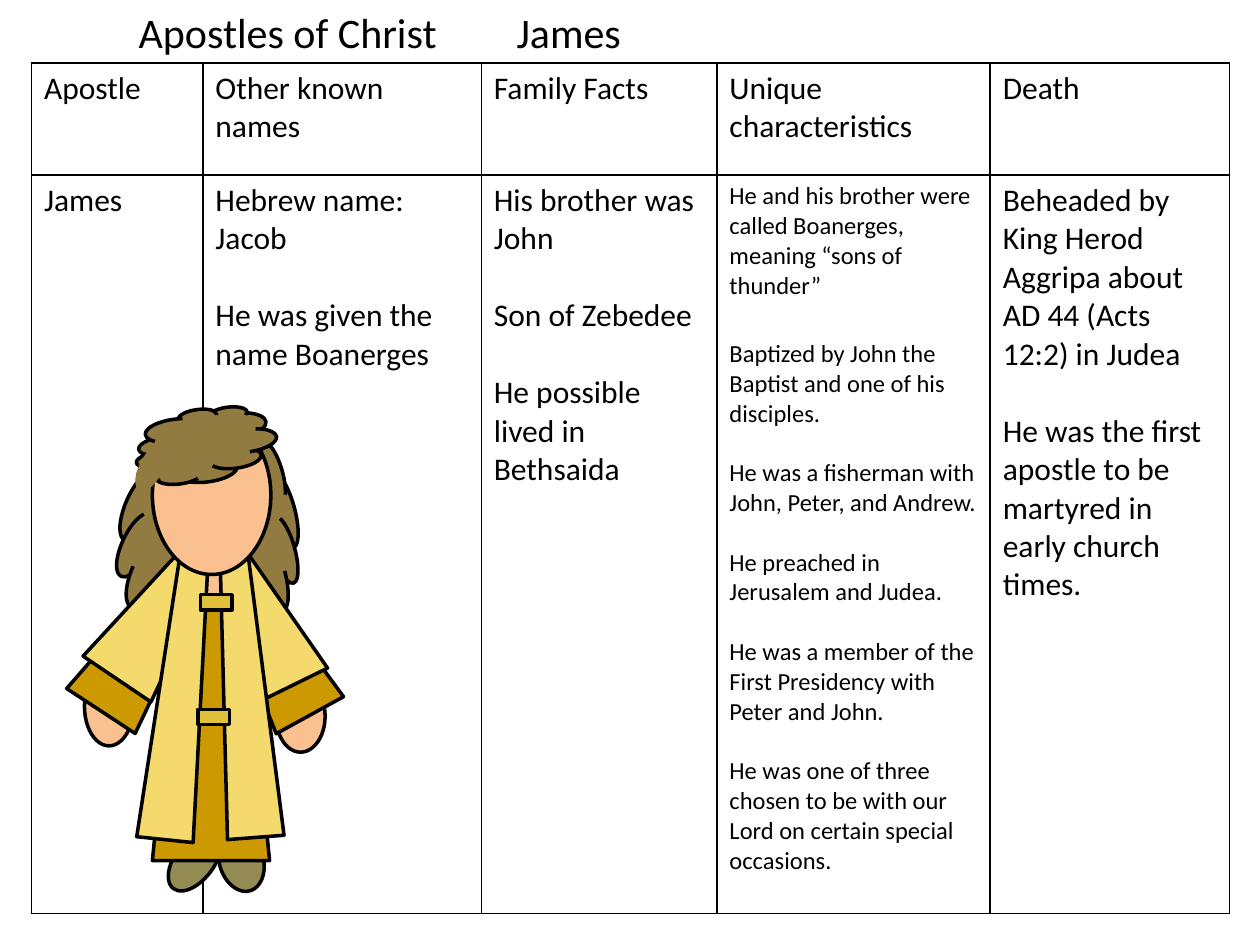
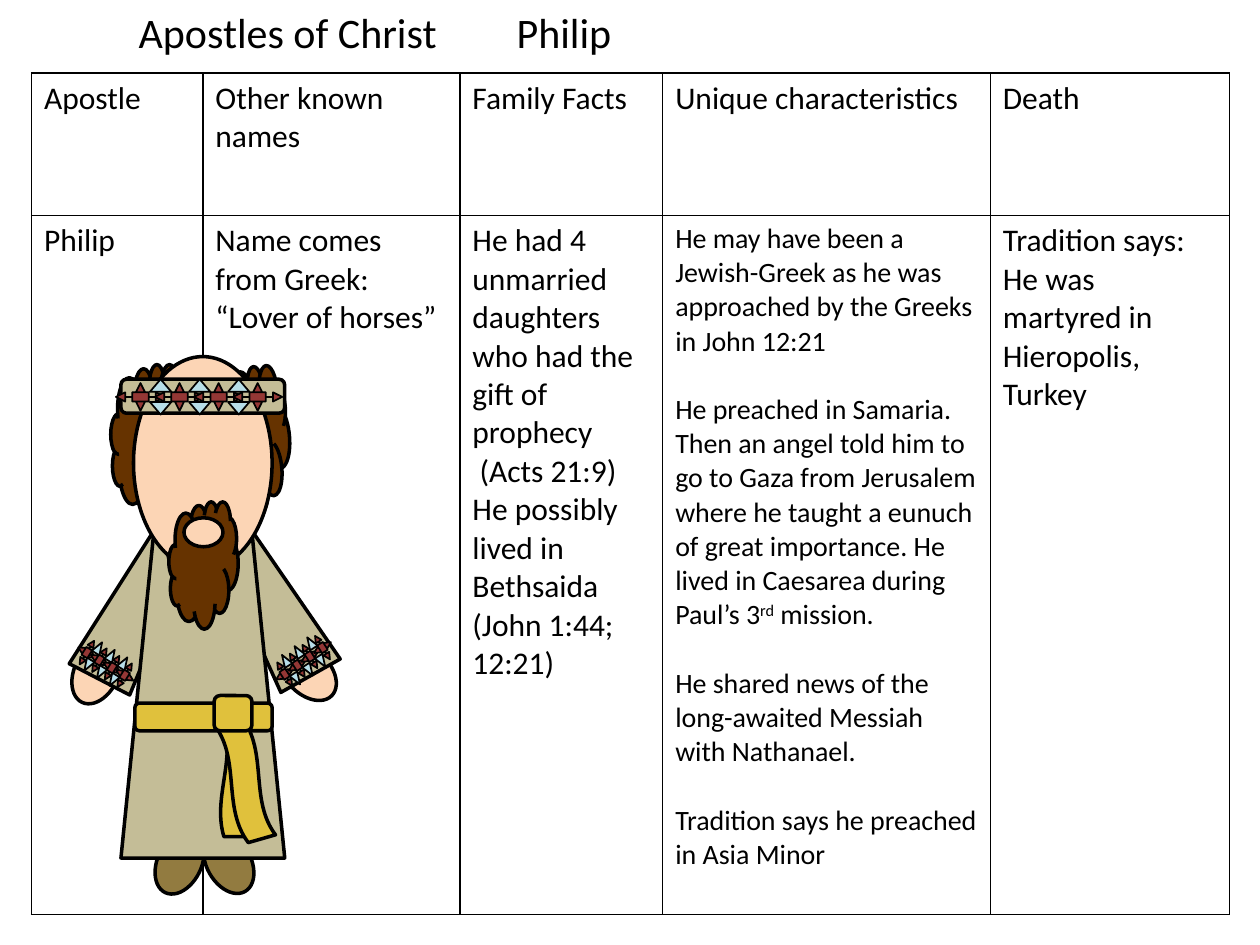
from lxml import etree
from pptx import Presentation
from pptx import util as u
from pptx.dml.color import RGBColor
from pptx.enum import shapes, text
from pptx.oxml.ns import qn

BLACK = RGBColor(0x00, 0x00, 0x00)
OLIVE = RGBColor(0x92, 0x7B, 0x40)
SHOE = RGBColor(0x94, 0x8A, 0x54)
TAN = RGBColor(0xFA, 0xC0, 0x90)
PEACH = RGBColor(0xFC, 0xD5, 0xB5)
OCHRE = RGBColor(0xCC, 0x99, 0x00)
CREAM = RGBColor(0xF4, 0xDA, 0x6C)
GOLD = RGBColor(0xE0, 0xC1, 0x3C)
BROWN = RGBColor(0x66, 0x33, 0x00)
LINEN = RGBColor(0xC4, 0xBD, 0x97)
RED = RGBColor(0x95, 0x37, 0x35)
BLUE = RGBColor(0xB7, 0xDE, 0xE8)

FONT = "Calibri"
TITLE_AREA = (1, 0, 7.25, 0.5)
TABLE_LEFT, TABLE_WIDTH = 0.25, 9.5
HEADINGS = ["Apostle", "Other known names", "Family Facts",
            "Unique characteristics", "Death"]

KIND = shapes.MSO_SHAPE
CLOUD, OVAL, BOX, ROUND = KIND.CLOUD, KIND.OVAL, KIND.RECTANGLE, KIND.ROUNDED_RECTANGLE
TRAPEZOID, WAVE = KIND.TRAPEZOID, KIND.WAVE
FLARE = KIND.FLOWCHART_MANUAL_OPERATION
BEAD, TRIANGLE = KIND.QUAD_ARROW_CALLOUT, KIND.ISOSCELES_TRIANGLE
BEAD_ADJUSTMENTS = (0, 0.167, 0.333, 0.481)

# Figure parts, back to front: kind, (left, top, width, height), rotation, fill
JAMES_FIGURE = [
    (CLOUD, (0.97, 3.39, 0.81, 1.5), 25.3, OLIVE, {"flip": True}),
    (CLOUD, (1.72, 3.37, 0.63, 1.5), 344.3, OLIVE),
    (OVAL, (2.19, 5.4, 0.39, 0.57), 0, TAN),
    (OVAL, (0.67, 5.29, 0.39, 0.63), 0, TAN),
    (OVAL, (1.39, 6.55, 0.31, 0.56), 37.1, SHOE),
    (OVAL, (1.74, 6.58, 0.35, 0.5), 343.7, SHOE),
    (TRAPEZOID, (0.8, 4.56, 0.65, 1.18), 33.3, OCHRE),
    (TRAPEZOID, (0.9, 4.42, 0.65, 1.06), 34, CREAM),
    (TRAPEZOID, (1.87, 4.57, 0.61, 1.18), 331.2, OCHRE),
    (TRAPEZOID, (1.75, 4.44, 0.65, 1.06), 333.9, CREAM),
    (TRAPEZOID, (1.21, 4.47, 0.93, 2.36), 0, OCHRE),
    (OVAL, (1.47, 4.28, 0.39, 0.5), 0, TAN),
    (TRAPEZOID, (1.72, 4.43, 0.45, 2.22), 355.6, CREAM),
    (TRAPEZOID, (1.2, 4.41, 0.45, 2.26), 5.9, CREAM),
    (OVAL, (1.21, 3.3, 0.94, 1.26), 0, TAN),
    (BOX, (1.59, 4.72, 0.25, 0.12), 0, GOLD),
    (BOX, (1.57, 5.63, 0.25, 0.12), 0, GOLD),
    (CLOUD, (1.34, 2.97, 0.58, 1.13), 262.4, OLIVE, {"flip": True}),
    (OVAL, (1.01, 3.63, 0.38, 0.16), 297.2, OLIVE, {"line": OLIVE}),
]
PHILIP_FIGURE = [
    (OVAL, (1.55, 6.67, 0.53, 0.35), 60.8, OLIVE),
    (OVAL, (1.16, 6.67, 0.53, 0.35), 115.4, OLIVE),
    (CLOUD, (1.69, 2.91, 0.61, 1.18), 355.1, BROWN),
    (CLOUD, (0.88, 2.89, 0.6, 1.18), 0, BROWN),
    (OVAL, (2.18, 5.16, 0.53, 0.35), 45.1, PEACH),
    (OVAL, (0.5, 5.16, 0.53, 0.35), 115.4, PEACH),
    (FLARE, (1.9, 4.24, 0.54, 1.2), 150.6, LINEN),
    (FLARE, (0.8, 4.24, 0.54, 1.22), 207.4, LINEN),
    (FLARE, (0.96, 4.23, 1.3, 2.58), 180, LINEN),
    (ROUND, (1.07, 5.58, 1.09, 0.22), 0, GOLD),
    (OVAL, (1.32, 3.73, 0.55, 1.03), 0, PEACH),
    (OVAL, (1.06, 2.83, 1.1, 1.69), 0, PEACH),
    (CLOUD, (1.34, 3.98, 0.55, 1.01), 0, BROWN),
    (ROUND, (0.96, 3.01, 1.3, 0.27), 0, LINEN),
    (OVAL, (1.46, 4.11, 0.31, 0.23), 0, PEACH),
    (WAVE, (1.41, 6.08, 0.9, 0.22), 270, GOLD),
    (WAVE, (1.46, 6.04, 0.97, 0.3), 254, GOLD),
    (ROUND, (1.7, 5.52, 0.3, 0.28), 0, GOLD),
]
HEADBAND = {"step": (0.31, 0), "angle": 0,
            "bead": (0.92, 3.04), "bead_size": (0.39, 0.22),
            "upper": (1.19, 3.01), "lower": (1.19, 3.19), "triangle_size": (0.17, 0.1)}
CUFF_SIZES = {"bead_size": (0.16, 0.22), "triangle_size": (0.07, 0.1)}
LEFT_CUFF = {"step": (0.1, 0.06), "angle": 31.5, "bead": (0.61, 5.07),
             "upper": (0.75, 5.09), "lower": (0.66, 5.23), **CUFF_SIZES}
RIGHT_CUFF = {"step": (0.1, -0.07), "angle": 327.5, "bead": (2.18, 5.24),
              "upper": (2.23, 5.19), "lower": (2.32, 5.34), **CUFF_SIZES}

# Each cell of facts: size, space between paragraphs, paragraphs (^ marks superscript).
# A paragraph given as (size, text) differs from the size of its cell.
APOSTLES = [
    {
        "name": "James", "top": 0.5,
        "columns": (1.36, 2.21, 1.87, 2.17, 1.9), "rows": (0.89, 5.86),
        "facts": [
            (18, 0, ["James"]),
            (18, 22, ["Hebrew name: Jacob", "He was given the name Boanerges"]),
            (18, 22, ["His brother was John", "Son of Zebedee",
                      "He possible lived in Bethsaida"]),
            (14, 17, [
                "He and his brother were called Boanerges, meaning “sons of thunder”",
                "Baptized by John the Baptist and one of his disciples.",
                "He was a fisherman with John, Peter, and Andrew.",
                "He preached in Jerusalem and Judea.",
                "He was a member of the First Presidency with Peter and John.",
                "He was one of three chosen to be with our Lord on certain "
                "special occasions."]),
            (18, 22, [
                "Beheaded by King Herod Aggripa about AD 44 (Acts 12:2) in Judea",
                "He was the first apostle to be martyred in early church times."]),
        ],
        "wide_gap": (3, 1, 22),
        "figure": JAMES_FIGURE, "trims": [],
    },
    {
        "name": "Philip", "top": 0.58,
        "columns": (1.36, 2.04, 1.61, 2.6, 1.9), "rows": (1.13, 5.55),
        "facts": [
            (18, 0, ["Philip"]),
            (18, 0, ["Name comes from Greek: “Lover of horses”"]),
            (18, 0, [
                "He had 4 unmarried daughters who had the gift of prophecy",
                " (Acts 21:9)",
                "He possibly lived in Bethsaida (John 1:44; 12:21)"]),
            (16, 19.5, [
                "He may have been a Jewish-Greek as he was approached by the "
                "Greeks in John 12:21",
                "He preached in Samaria. Then an angel told him to go to Gaza from "
                "Jerusalem where he taught a eunuch of great importance. He lived in "
                "Caesarea during Paul’s 3^rd^ mission.",
                "He shared news of the long-awaited Messiah with Nathanael.",
                "Tradition says he preached in Asia Minor"]),
            (18, 0, ["Tradition says:", "He was martyred in Hieropolis, Turkey"]),
        ],
        "wide_gap": None,
        "figure": PHILIP_FIGURE, "trims": [HEADBAND, LEFT_CUFF, RIGHT_CUFF],
    },
]


def inches(values):
    return [u.Inches(value) for value in values]


def set_font(font, size):
    for key, value in {"name": FONT, "size": u.Pt(size), "bold": False}.items():
        setattr(font, key, value)
    font.color.rgb = BLACK


def add_title(page, name):
    title = page.shapes.title
    title.left, title.top, title.width, title.height = inches(TITLE_AREA)
    frame = title.text_frame
    frame.text = f"Apostles of Christ\t\t{name}"
    frame.vertical_anchor = text.MSO_ANCHOR.TOP
    frame.auto_size = text.MSO_AUTO_SIZE.NONE
    para = frame.paragraphs[0]
    para.alignment = text.PP_ALIGN.LEFT
    set_font(para.runs[0].font, 24)


def outline_cell(cell):
    """Give the cell a black border on all sides and no fill."""
    properties = cell._tc.get_or_add_tcPr()
    for side in ("lnL", "lnR", "lnT", "lnB"):
        line = etree.SubElement(properties, qn(f"a:{side}"), w=str(u.Pt(1)))
        solid = etree.SubElement(line, qn("a:solidFill"))
        etree.SubElement(solid, qn("a:srgbClr"), val=str(BLACK))
    cell.fill.background()


def fill_cell(cell, size, gap, paragraphs):
    outline_cell(cell)
    for index, content in enumerate(paragraphs):
        para = cell.text_frame.paragraphs[0] if index == 0 else cell.text_frame.add_paragraph()
        if index:
            para.space_before = u.Pt(gap)
        for part, words in enumerate(content.split("^")):
            span = para.add_run()
            span.text = words
            set_font(span.font, size)
            if part % 2:
                span._r.get_or_add_rPr().set("baseline", "30000")


def add_facts(page, apostle):
    area = inches((TABLE_LEFT, apostle["top"], TABLE_WIDTH, sum(apostle["rows"])))
    table = page.shapes.add_table(2, len(HEADINGS), *area).table
    table.first_row = table.horz_banding = False
    for column, width in zip(table.columns, apostle["columns"]):
        column.width = u.Inches(width)
    for row, height in zip(table.rows, apostle["rows"]):
        row.height = u.Inches(height)
    for index, heading in enumerate(HEADINGS):
        fill_cell(table.cell(0, index), 18, 0, [heading])
        fill_cell(table.cell(1, index), *apostle["facts"][index])
    if apostle["wide_gap"]:
        column, paragraph, gap = apostle["wide_gap"]
        table.cell(1, column).text_frame.paragraphs[paragraph].space_before = u.Pt(gap)


def add_part(figure, kind, area, angle, fill, options=None, weight=2):
    options = options or {}
    part = figure.shapes.add_shape(kind, *inches(area))
    part.shadow.inherit = False
    part.rotation = angle
    part.fill.solid()
    part.fill.fore_color.rgb = fill
    part.line.color.rgb = options.get("line", BLACK)
    part.line.width = u.Pt(weight)
    if options.get("flip"):
        part._element.spPr.find(qn("a:xfrm")).set("flipH", "1")
    if kind == BEAD:
        for index, value in enumerate(BEAD_ADJUSTMENTS):
            part.adjustments[index] = value


def add_trim(figure, trim):
    """Lay four beads in a row, with triangles between them above and below."""
    rows = [("bead", BEAD, "bead_size", 4, 0, RED),
            ("upper", TRIANGLE, "triangle_size", 3, 0, BLUE),
            ("lower", TRIANGLE, "triangle_size", 3, 180, BLUE)]
    for start, kind, size, count, turn, fill in rows:
        for index in range(count):
            place = [first + index * step for first, step in zip(trim[start], trim["step"])]
            add_part(figure, kind, (*place, *trim[size]),
                     (trim["angle"] + turn) % 360, fill, weight=1)


def main():
    deck = Presentation()
    deck.slide_width, deck.slide_height = u.Inches(10), u.Inches(7.5)
    for apostle in APOSTLES:
        page = deck.slides.add_slide(deck.slide_layouts[5])
        add_title(page, apostle["name"])
        add_facts(page, apostle)
        figure = page.shapes.add_group_shape()
        for part in apostle["figure"]:
            add_part(figure, *part)
        for trim in apostle["trims"]:
            add_trim(figure, trim)
    deck.save("out.pptx")


if __name__ == "__main__":
    main()
